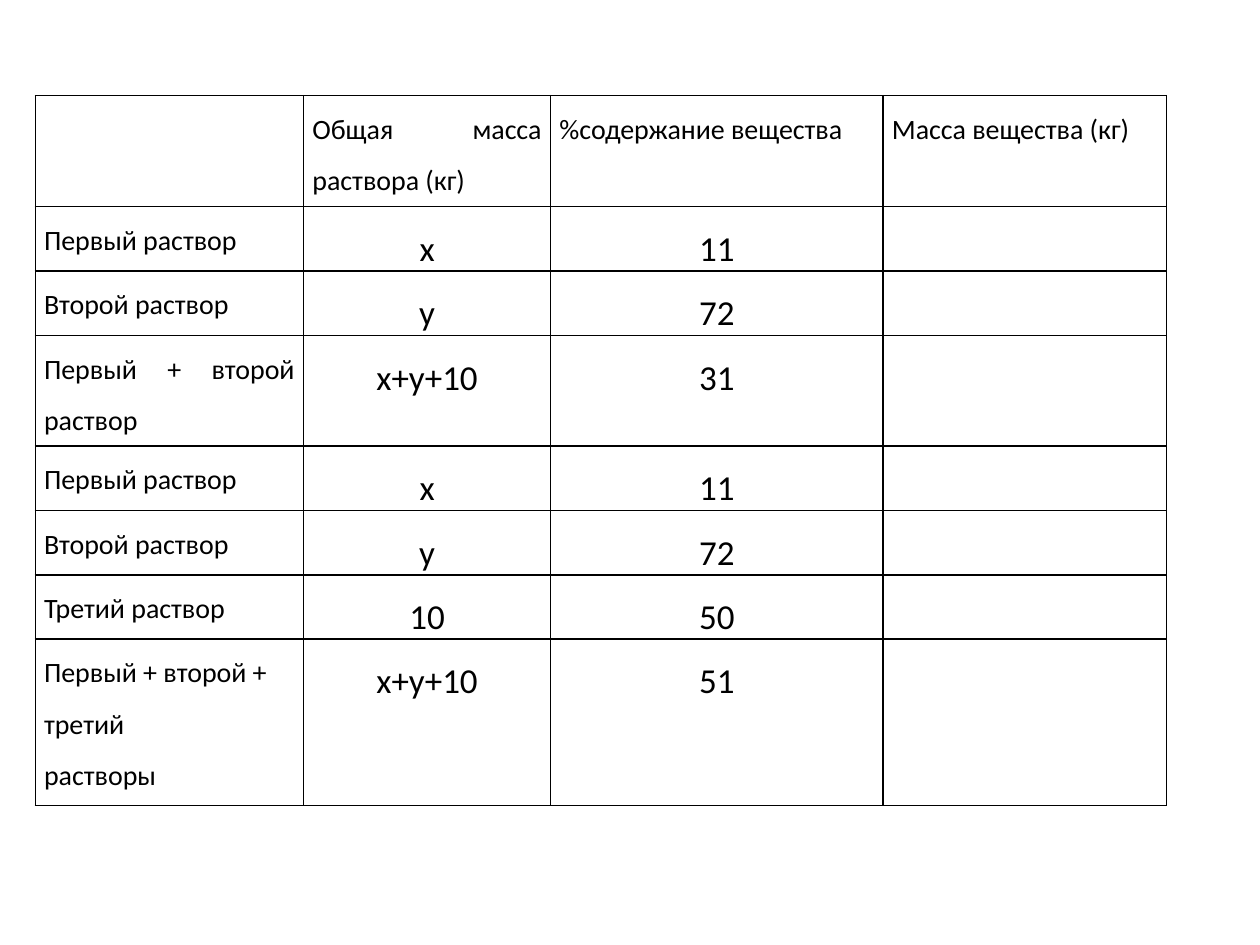
from dataclasses import dataclass

from lxml import etree
from pptx import Presentation
from pptx.dml.color import RGBColor
from pptx.enum.text import PP_ALIGN
from pptx.oxml.ns import qn
from pptx.util import Inches, Pt

JUSTIFY, CENTER = PP_ALIGN.JUSTIFY, PP_ALIGN.CENTER

HEADER = ("", "Общая масса раствора (кг)", "%содержание вещества", "Масса вещества (кг)")
SOLUTIONS = [
    ("Первый раствор", "х", "11", ""),
    ("Второй раствор", "у", "72", ""),
]
ROWS = [
    HEADER,
    *SOLUTIONS,
    ("Первый + второй раствор", "х+у+10", "31", ""),
    *SOLUTIONS,
    ("Третий раствор", "10", "50", ""),
    ("Первый + второй +\nтретий\nрастворы", "х+у+10", "51", ""),
]
COLUMN_WIDTHS = (2.13, 1.96, 2.64, 2.25)
ROW_HEIGHTS = (0.88, 0.46, 0.46, 0.88, 0.46, 0.46, 0.46, 1.32)
LEFT, TOP = 0.28, 0.76


@dataclass(frozen=True)
class Theme:
    font: str = "Calibri"
    ink: str = "000000"
    label_size: int = 16
    value_size: int = 20
    line_spacing: float = 1.5
    border: float = 1
    side_margin: float = 0.07


THEME = Theme()


def add_borders(cell):
    properties = cell._tc.get_or_add_tcPr()
    for side in ("lnL", "lnR", "lnT", "lnB"):
        line = etree.SubElement(properties, qn(f"a:{side}"), w=str(Pt(THEME.border)))
        fill = etree.SubElement(line, qn("a:solidFill"))
        etree.SubElement(fill, qn("a:srgbClr"), val=THEME.ink)


def fill_cell(cell, text, size, alignment):
    cell.margin_left = cell.margin_right = Inches(THEME.side_margin)
    cell.margin_top = cell.margin_bottom = 0
    add_borders(cell)
    cell.fill.background()
    if not text:
        return
    cell.text_frame.text = text
    for paragraph in cell.text_frame.paragraphs:
        paragraph.alignment = alignment
        paragraph.line_spacing = THEME.line_spacing
        for run in paragraph.runs:
            run.font.name = THEME.font
            run.font.size = Pt(size)
            run.font.bold = False
            run.font.color.rgb = RGBColor.from_string(THEME.ink)


def add_solution_table(slide):
    table = slide.shapes.add_table(
        len(ROWS), len(COLUMN_WIDTHS), Inches(LEFT), Inches(TOP),
        Inches(sum(COLUMN_WIDTHS)), Inches(sum(ROW_HEIGHTS)),
    ).table
    table.first_row = table.horz_banding = False
    for column, width in zip(table.columns, COLUMN_WIDTHS):
        column.width = Inches(width)
    for row_index, (row, height) in enumerate(zip(ROWS, ROW_HEIGHTS)):
        table.rows[row_index].height = Inches(height)
        for column_index, text in enumerate(row):
            is_label = row_index == 0 or column_index == 0
            size = THEME.label_size if is_label else THEME.value_size
            alignment = JUSTIFY if is_label else CENTER
            fill_cell(table.cell(row_index, column_index), text, size, alignment)


def main():
    presentation = Presentation()
    presentation.slide_width = Inches(10)
    presentation.slide_height = Inches(7.5)
    slide = presentation.slides.add_slide(presentation.slide_layouts[6])
    add_solution_table(slide)
    presentation.save("out.pptx")


if __name__ == "__main__":
    main()
